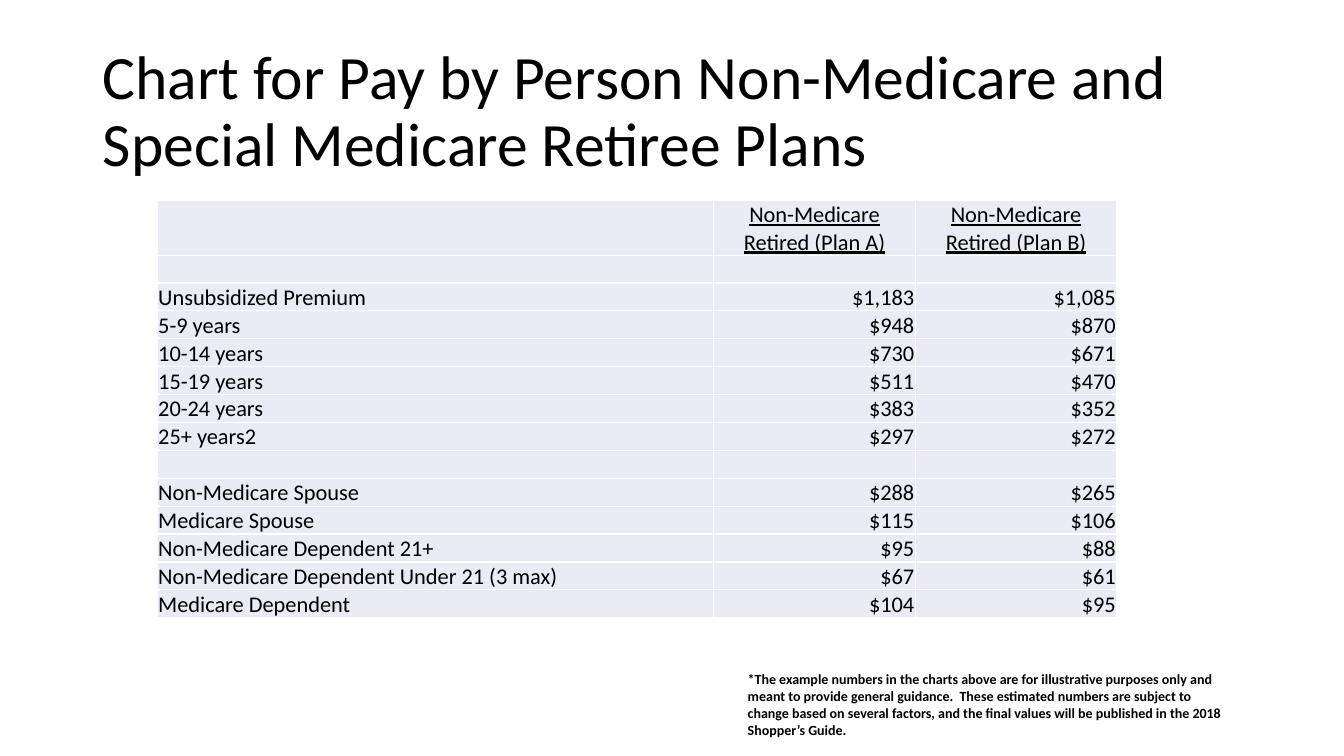
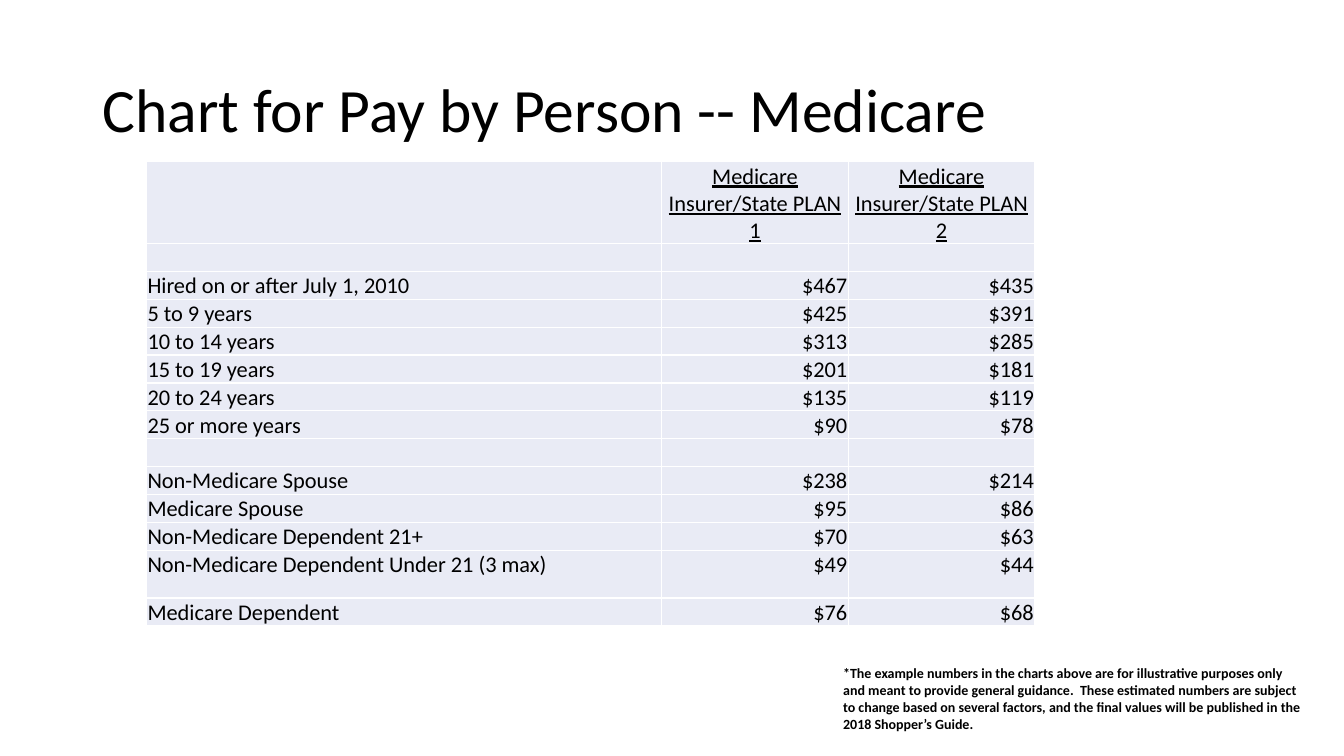
from lxml.etree import SubElement
from pptx import Presentation
from pptx.dml.color import RGBColor
from pptx.enum.text import MSO_ANCHOR, MSO_AUTO_SIZE, PP_ALIGN
from pptx.oxml.ns import qn
from pptx.util import Inches, Pt

SLIDE_WIDTH, SLIDE_HEIGHT = Inches(13.33), Inches(7.5)
BLACK = RGBColor(0x00, 0x00, 0x00)
WHITE = RGBColor(0xFF, 0xFF, 0xFF)
PALE_BLUE = RGBColor(0xE9, 0xEB, 0xF5)
FONT = "Calibri"
TITLE_SIZE, TABLE_SIZE, FOOTNOTE_SIZE = Pt(44), Pt(16), Pt(10)
CELL_INSET = Inches(0.01)
COLUMN_SHARES = (0.58, 0.21, 0.21)
LINE_HEIGHT = Inches(0.27)

FOOTNOTE = (
    "*The example numbers in the charts above are for illustrative purposes only "
    "and meant to provide general guidance.  These estimated numbers are subject "
    "to change based on several factors, and the final values will be published "
    "in the 2018 Shopper’s Guide."
)
BLANK_ROW = ("", "", "")

RETIREE_PREMIUMS = [
    ("", "Non-Medicare Retired (Plan A)", "Non-Medicare Retired (Plan B)"),
    BLANK_ROW,
    ("Unsubsidized Premium", "$1,183", "$1,085"),
    ("5-9 years", "$948", "$870"),
    ("10-14 years", "$730", "$671"),
    ("15-19 years", "$511", "$470"),
    ("20-24 years", "$383", "$352"),
    ("25+ years2", "$297", "$272"),
    BLANK_ROW,
    ("Non-Medicare Spouse", "$288", "$265"),
    ("Medicare Spouse", "$115", "$106"),
    ("Non-Medicare Dependent 21+", "$95", "$88"),
    ("Non-Medicare Dependent Under 21 (3 max)", "$67", "$61"),
    ("Medicare Dependent", "$104", "$95"),
]
MEDICARE_PREMIUMS = [
    ("", "Medicare Insurer/State PLAN 1", "Medicare Insurer/State PLAN 2"),
    BLANK_ROW,
    ("Hired on or after July 1, 2010", "$467", "$435"),
    ("5 to 9 years", "$425", "$391"),
    ("10 to 14 years", "$313", "$285"),
    ("15 to 19 years", "$201", "$181"),
    ("20 to 24 years", "$135", "$119"),
    ("25 or more years", "$90", "$78"),
    BLANK_ROW,
    ("Non-Medicare Spouse", "$238", "$214"),
    ("Medicare Spouse", "$95", "$86"),
    ("Non-Medicare Dependent 21+", "$70", "$63"),
    ("Non-Medicare Dependent Under 21 (3 max)", "$49", "$44"),
    ("Medicare Dependent", "$76", "$68"),
]


def across(percent):
    return round(SLIDE_WIDTH * percent / 100)


def down(percent):
    return round(SLIDE_HEIGHT * percent / 100)


def style_runs(paragraph, size, bold=False, underline=False):
    for run in paragraph.runs:
        run.font.name, run.font.size = FONT, size
        run.font.bold, run.font.underline = bold, underline
        run.font.color.rgb = BLACK


def place_title(layout):
    """Set the title position that every slide inherits."""
    title = layout.placeholders[0]
    title.left, title.top = across(6.9), down(5.3)
    title.width, title.height = across(86.3), down(19.3)


def add_title(slide, wording):
    frame = slide.shapes.title.text_frame
    frame.text = wording
    frame.auto_size = MSO_AUTO_SIZE.NONE
    frame.vertical_anchor = MSO_ANCHOR.MIDDLE
    paragraph = frame.paragraphs[0]
    paragraph.alignment, paragraph.line_spacing = PP_ALIGN.LEFT, 0.9
    style_runs(paragraph, TITLE_SIZE)


def add_footnote(slide, left, top, width):
    frame = slide.shapes.add_textbox(left, top, width, down(10.3)).text_frame
    frame.word_wrap = True
    frame.text = FOOTNOTE
    style_runs(frame.paragraphs[0], FOOTNOTE_SIZE, bold=True)


def outline_cell(cell):
    properties = cell._tc.get_or_add_tcPr()
    for side in ("lnL", "lnR", "lnT", "lnB"):
        border = SubElement(properties, qn(f"a:{side}"), w=str(Pt(1)))
        fill = SubElement(border, qn("a:solidFill"))
        SubElement(fill, qn("a:srgbClr"), val=str(WHITE))


def fill_cell(cell, wording, alignment, is_header):
    outline_cell(cell)
    cell.fill.solid()
    cell.fill.fore_color.rgb = PALE_BLUE
    cell.margin_left = cell.margin_right = cell.margin_top = CELL_INSET
    cell.margin_bottom = 0
    cell.vertical_anchor = MSO_ANCHOR.BOTTOM if is_header else MSO_ANCHOR.TOP
    paragraph = cell.text_frame.paragraphs[0]
    paragraph.alignment = alignment
    if wording:
        paragraph.text = wording
        style_runs(paragraph, TABLE_SIZE, underline=is_header)
    else:
        # An empty cell takes its line height from the paragraph end mark.
        SubElement(paragraph._p, qn("a:endParaRPr"), sz=str(int(TABLE_SIZE.pt * 100)))


def add_premium_table(slide, premiums, left, top, width, row_lines):
    """Draw premiums; row_lines maps a row index to its height in text lines."""
    heights = [round(LINE_HEIGHT * row_lines.get(row, 1)) for row in range(len(premiums))]
    table = slide.shapes.add_table(
        len(premiums), len(COLUMN_SHARES), left, top, width, sum(heights)
    ).table
    table.first_row = table.horz_banding = False
    for column, share in zip(table.columns, COLUMN_SHARES):
        column.width = round(width * share)
    for row, (height, entries) in enumerate(zip(heights, premiums)):
        table.rows[row].height = height
        is_header = row == 0
        value_alignment = PP_ALIGN.CENTER if is_header else PP_ALIGN.RIGHT
        for column, wording in enumerate(entries):
            alignment = value_alignment if column else PP_ALIGN.LEFT
            fill_cell(table.cell(row, column), wording, alignment, is_header)


def main():
    deck = Presentation()
    deck.slide_width, deck.slide_height = SLIDE_WIDTH, SLIDE_HEIGHT
    title_only = deck.slide_layouts[5]
    place_title(title_only)

    retirees = deck.slides.add_slide(title_only)
    add_title(
        retirees,
        "Chart for Pay by Person Non-Medicare and Special Medicare Retiree Plans",
    )
    add_footnote(retirees, across(54.9), down(88.1), across(36.9))
    add_premium_table(
        retirees, RETIREE_PREMIUMS, across(11.7), down(26.5), across(71.4), {0: 2}
    )

    medicare = deck.slides.add_slide(title_only)
    add_title(medicare, "Chart for Pay by Person -- Medicare")
    add_footnote(medicare, across(62), down(87.3), across(35.6))
    add_premium_table(
        medicare, MEDICARE_PREMIUMS, across(10.9), down(21.4), across(66.1),
        {0: 3, 12: 1.75},
    )

    deck.save("out.pptx")


if __name__ == "__main__":
    main()
